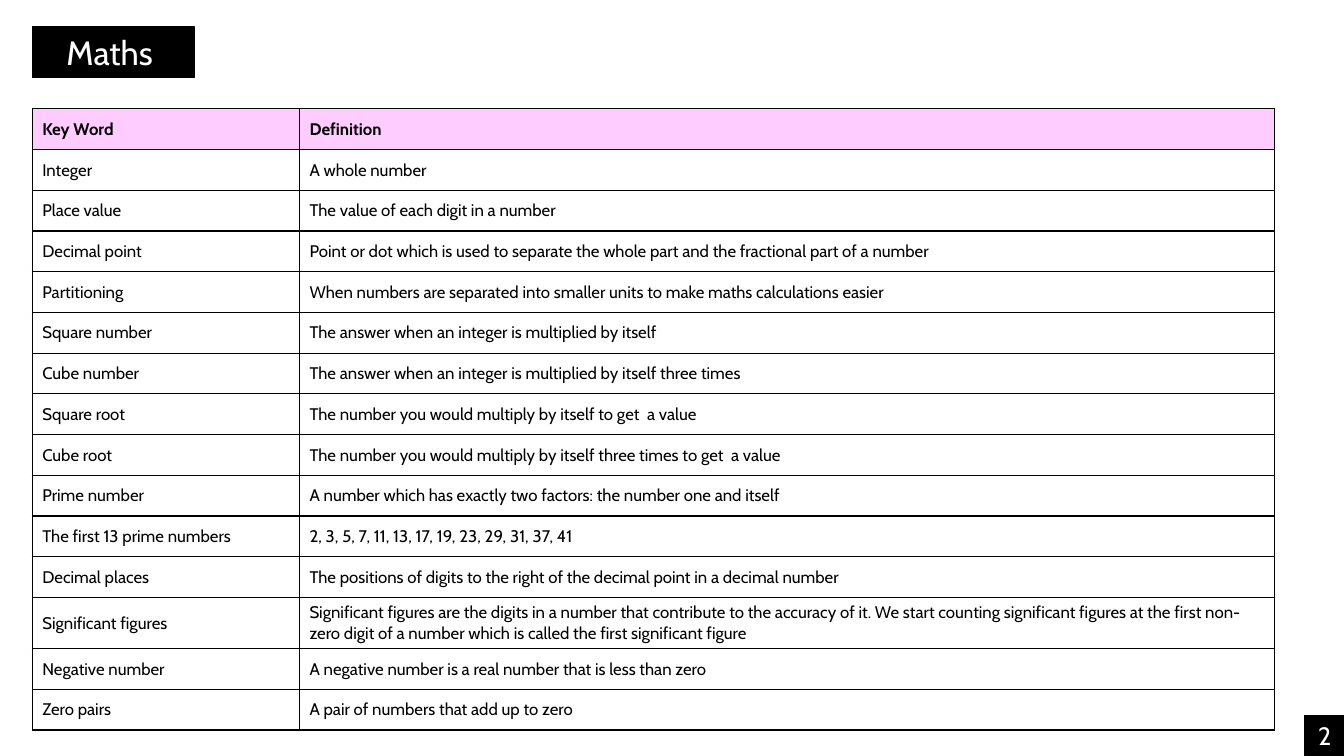
import pptx
import pptx.util
import pptx.dml.color
import pptx.enum.shapes
import pptx.enum.text
import pptx.oxml
import pptx.oxml.ns
import lxml.etree

Inches, Pt = pptx.util.Inches, pptx.util.Pt

FONT = "Cabin"
COLORS = {"ink": "000000", "paper": "FFFFFF", "header": "FFCCFF"}
LABELS = [
    ("Maths ", (0.32, 0.27, 1.61, 0.5), 24, 1),
    ("2", (12.94, 7.1, 0.4, 0.4), 18, 0.75),
]
GLOSSARY = [
    ("Key Word", "Definition"),
    ("Integer", "A whole number"),
    ("Place value", "The value of each digit in a number"),
    ("Decimal point", "Point or dot which is used to separate the whole part and the fractional part of a number"),
    ("Partitioning", "When numbers are separated into smaller units to make maths calculations easier"),
    ("Square number", "The answer when an integer is multiplied by itself"),
    ("Cube number", "The answer when an integer is multiplied by itself three times"),
    ("Square root", "The number you would multiply by itself to get  a value"),
    ("Cube root", "The number you would multiply by itself three times to get  a value"),
    ("Prime number", "A number which has exactly two factors: the number one and itself"),
    ("The first 13 prime numbers", "2, 3, 5, 7, 11, 13, 17, 19, 23, 29, 31, 37, 41"),
    ("Decimal places", "The positions of digits to the right of the decimal point in a decimal number"),
    ("Significant figures", "Significant figures are the digits in a number that contribute to the accuracy of it. "
     "We start counting significant figures at the first non-zero digit of a number which is called "
     "the first significant figure"),
    ("Negative number", "A negative number is a real number that is less than zero"),
    ("Zero pairs", "A pair of numbers that add up to zero"),
]
TABLE_BOX = (0.32, 1.08, 12.32, 6.16)
COLUMN_WIDTHS = (2.65, 9.67)
TALL_ROW, TALL_HEIGHT = "Significant figures", 0.5


def rgb(name):
    return pptx.dml.color.RGBColor.from_string(COLORS[name])


def style_run(r, size, color, bold=False):
    r.font.name = FONT
    r.font.size = Pt(size)
    r.font.bold = bold
    r.font.color.rgb = rgb(color)


def add_label(s, text, box, size, line_width):
    sp = s.shapes.add_shape(pptx.enum.shapes.MSO_SHAPE.RECTANGLE, *map(Inches, box))
    sp.shadow.inherit = False
    sp.fill.solid()
    sp.fill.fore_color.rgb = rgb("ink")
    sp.line.color.rgb = rgb("ink")
    sp.line.width = Pt(line_width)
    tf = sp.text_frame
    tf.text = text
    tf.vertical_anchor = pptx.enum.text.MSO_ANCHOR.MIDDLE
    p = tf.paragraphs[0]
    p.alignment = pptx.enum.text.PP_ALIGN.CENTER
    style_run(p.runs[0], size, "paper")


def add_borders(cell):
    props = cell._tc.get_or_add_tcPr()
    qn = pptx.oxml.ns.qn
    for i, side in enumerate(("lnL", "lnR", "lnT", "lnB")):
        ln = lxml.etree.Element(qn("a:" + side), w=str(Pt(1)))
        fill = lxml.etree.SubElement(ln, qn("a:solidFill"))
        lxml.etree.SubElement(fill, qn("a:srgbClr"), val=COLORS["ink"])
        props.insert(i, ln)


def add_glossary(s):
    table = s.shapes.add_table(len(GLOSSARY), len(COLUMN_WIDTHS), *map(Inches, TABLE_BOX)).table
    table.horz_banding = False
    for column, width in zip(table.columns, COLUMN_WIDTHS):
        column.width = Inches(width)
    row_height = (TABLE_BOX[3] - TALL_HEIGHT) / (len(GLOSSARY) - 1)
    for i, entry in enumerate(GLOSSARY):
        table.rows[i].height = Inches(TALL_HEIGHT if entry[0] == TALL_ROW else row_height)
        for j, text in enumerate(entry):
            cell = table.cell(i, j)
            cell.text_frame.text = text
            cell.vertical_anchor = pptx.enum.text.MSO_ANCHOR.MIDDLE
            if i == 0:
                cell.fill.solid()
                cell.fill.fore_color.rgb = rgb("header")
            else:
                cell.fill.background()
            add_borders(cell)
            style_run(cell.text_frame.paragraphs[0].runs[0], 12, "ink", bold=i == 0)


def main():
    prs = pptx.Presentation()
    prs.slide_width, prs.slide_height = Inches(13.33), Inches(7.5)
    s = prs.slides.add_slide(prs.slide_layouts[6])
    for label in LABELS:
        add_label(s, *label)
    add_glossary(s)
    prs.save("out.pptx")


if __name__ == "__main__":
    main()
